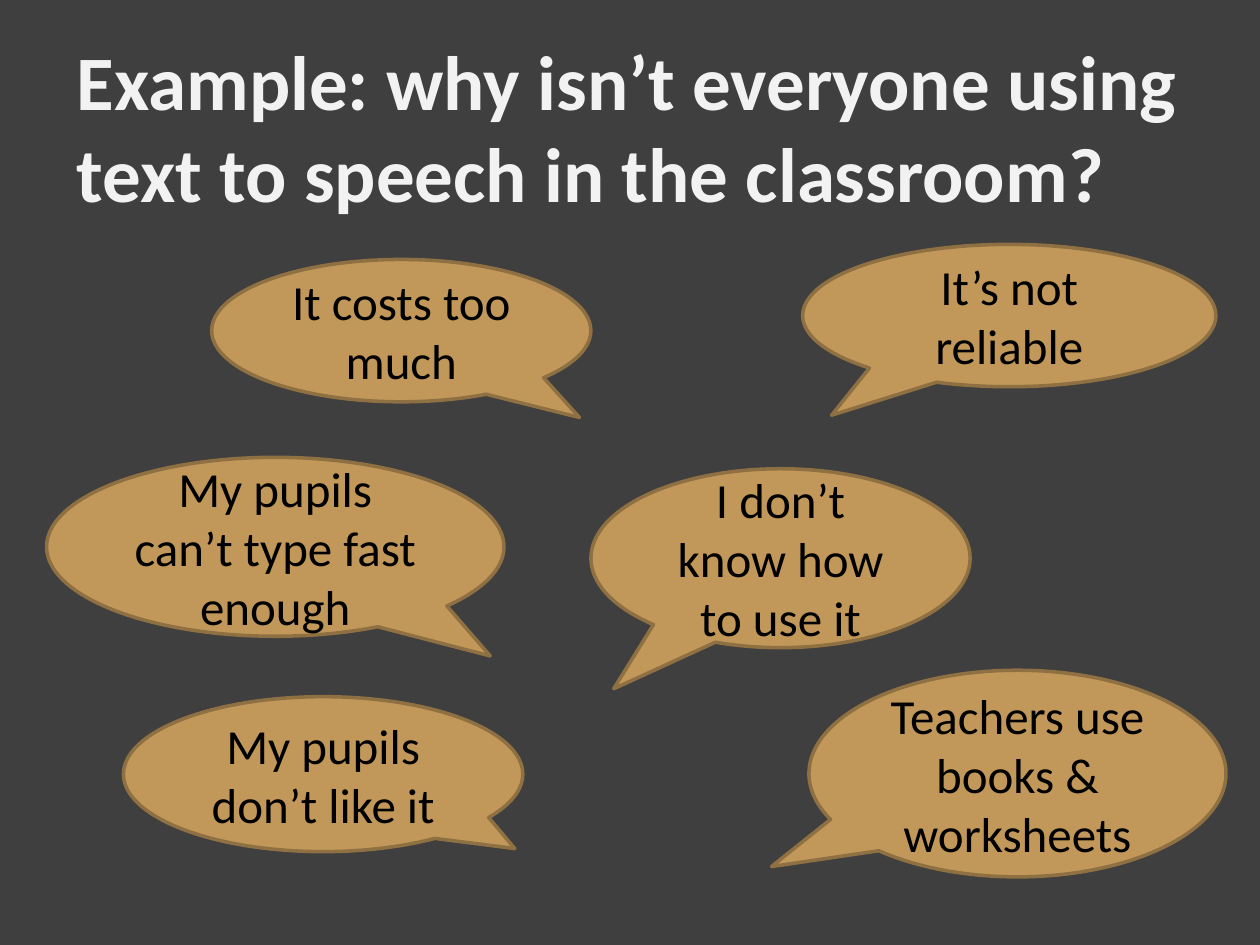
import pptx
import pptx.util
import pptx.dml.color
import pptx.enum.shapes
import pptx.enum.text

PX = 9144  # EMU per px, 100 px to the inch
COLORS = {"background": "3F3F3F", "title": "F2F2F2", "bubble": "C19859",
          "outline": "8F7042", "text": "000000"}
ALIGN = pptx.enum.text.PP_ALIGN

TITLE = "Example: why isn’t everyone using text to speech in the classroom?"
TITLE_BOX = (51, 29, 898, 142)

# Text, box (left, top, width, height), tip offset from the centre as a share of the size
BUBBLES = [
    ("Teachers use books & worksheets", (642, 532, 331, 164), (-0.59, 0.45)),
    ("My pupils don’t like it", (98, 553, 317, 123), (0.48, 0.48)),
    ("My pupils can’t type fast enough", (37, 363, 363, 142), (0.47, 0.61)),
    ("I don’t know how to use it", (469, 372, 301, 142), (-0.44, 0.73)),
    ("It’s not reliable", (637, 194, 328, 113), (-0.43, 0.7)),
    ("It costs too much", (168, 206, 301, 113), (0.47, 0.61)),
]


def rgb(name):
    return pptx.dml.color.RGBColor.from_string(COLORS[name])


def emu(box):
    return [pptx.util.Emu(v * PX) for v in box]


def write(shape, text, color, align, **font):
    tf = shape.text_frame
    tf.word_wrap = True
    tf.auto_size = pptx.enum.text.MSO_AUTO_SIZE.NONE
    tf.vertical_anchor = pptx.enum.text.MSO_ANCHOR.MIDDLE
    p = tf.paragraphs[0]
    p.alignment = align
    r = p.add_run()
    r.text = text
    for name, value in {"name": "Calibri", **font}.items():
        setattr(r.font, name, value)
    r.font.color.rgb = rgb(color)


def add_title(s, box):
    title = s.shapes.title
    title.left, title.top, title.width, title.height = emu(box)
    write(title, TITLE, "title", ALIGN.LEFT, size=pptx.util.Pt(44), bold=True)


def add_bubble(s, text, box, tip):
    bubble = s.shapes.add_shape(
        pptx.enum.shapes.MSO_SHAPE.OVAL_CALLOUT, *emu(box))
    bubble.adjustments[0], bubble.adjustments[1] = tip
    bubble.shadow.inherit = False
    bubble.fill.solid()
    bubble.fill.fore_color.rgb = rgb("bubble")
    bubble.line.color.rgb = rgb("outline")
    bubble.line.width = pptx.util.Pt(2)
    write(bubble, text, "text", ALIGN.CENTER, size=pptx.util.Pt(28))


def main():
    prs = pptx.Presentation()
    prs.slide_width, prs.slide_height = emu((1000, 750))
    s = prs.slides.add_slide(prs.slide_layouts.get_by_name("Title Only"))

    # Background
    s.background.fill.solid()
    s.background.fill.fore_color.rgb = rgb("background")

    # Heading and speech bubbles
    add_title(s, TITLE_BOX)
    for text, box, tip in BUBBLES:
        add_bubble(s, text, box, tip)
    prs.save("out.pptx")


if __name__ == "__main__":
    main()
